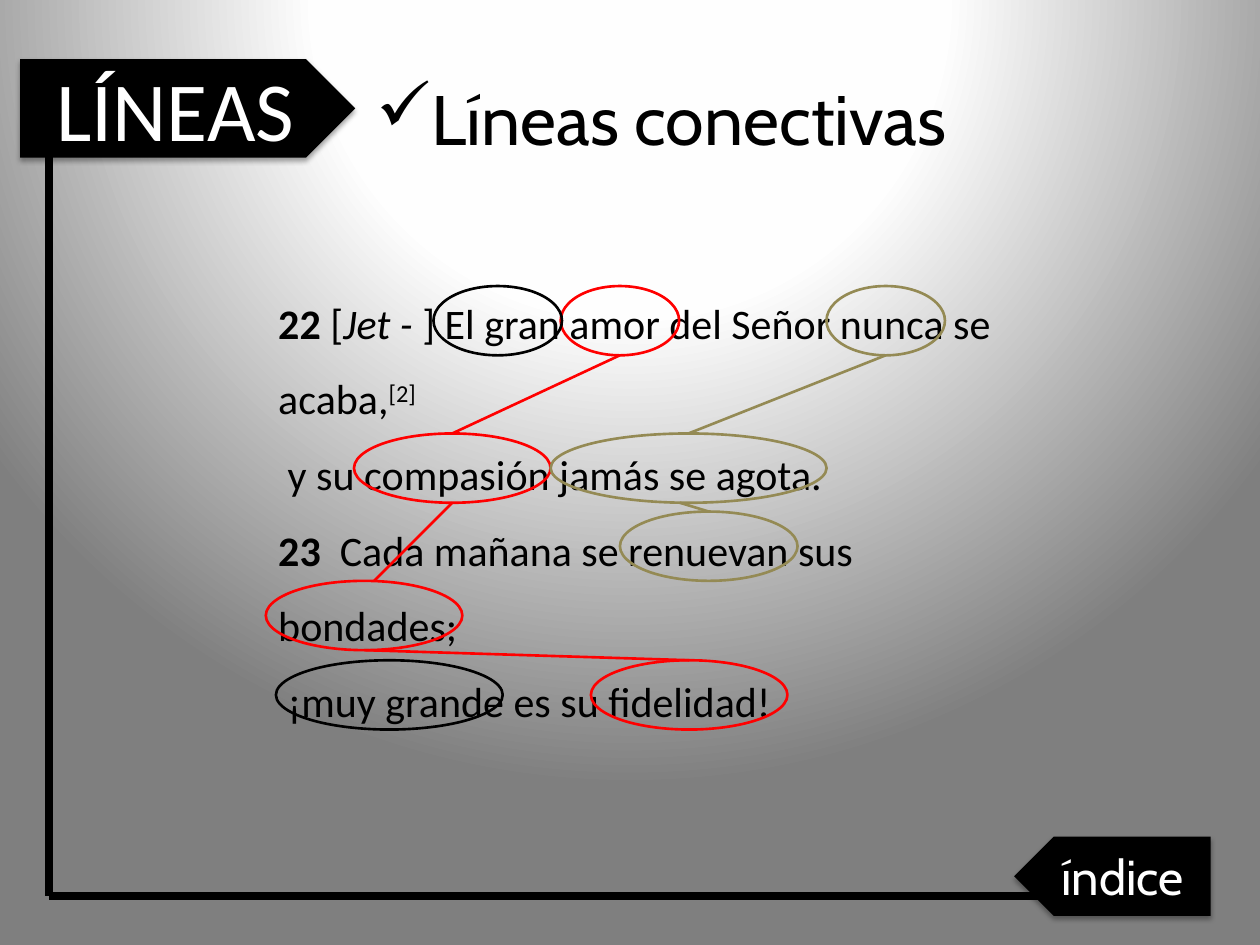
from dataclasses import dataclass

from lxml import etree
from pptx import Presentation
from pptx.dml.color import RGBColor
from pptx.enum.shapes import MSO_CONNECTOR, MSO_SHAPE
from pptx.enum.text import MSO_ANCHOR, MSO_AUTO_SIZE, PP_ALIGN
from pptx.oxml import parse_xml
from pptx.oxml.ns import nsdecls, qn
from pptx.util import Inches, Pt

STRAIGHT = MSO_CONNECTOR.STRAIGHT
OVAL = MSO_SHAPE.OVAL
PENTAGON = MSO_SHAPE.PENTAGON
TOP, MIDDLE = MSO_ANCHOR.TOP, MSO_ANCHOR.MIDDLE
LEFT, CENTER = PP_ALIGN.LEFT, PP_ALIGN.CENTER
NO_AUTOFIT = MSO_AUTO_SIZE.NONE

BLACK = RGBColor(0x00, 0x00, 0x00)
WHITE = RGBColor(0xFF, 0xFF, 0xFF)
RED = RGBColor(0xFF, 0x00, 0x00)
OLIVE = RGBColor(0x94, 0x8A, 0x54)

RING_HEIGHT = 0.55
FRAME_X, FRAME_Y = 0.39, 7.11

BACKGROUND = f"""
<p:bg {nsdecls("p", "a")}><p:bgPr><a:gradFill rotWithShape="1"><a:gsLst>
<a:gs pos="0"><a:srgbClr val="FFFFFF"/></a:gs>
<a:gs pos="40000"><a:srgbClr val="FEFEFE"/></a:gs>
<a:gs pos="100000"><a:srgbClr val="7F7F7F"/></a:gs></a:gsLst>
<a:path path="circle"><a:fillToRect l="50000" t="-80000" r="50000" b="180000"/></a:path>
</a:gradFill><a:effectLst/></p:bgPr></p:bg>"""

SHADOW = f"""
<a:effectLst {nsdecls("a")}>
<a:outerShdw blurRad="{Pt(3.1)}" dist="{Pt(1.8)}" dir="5400000" rotWithShape="0">
<a:srgbClr val="000000"><a:alpha val="35000"/></a:srgbClr></a:outerShdw></a:effectLst>"""


@dataclass(frozen=True)
class Ring:
    left: float
    top: float
    width: float
    color: RGBColor

    @property
    def center(self) -> float:
        return self.left + self.width / 2

    @property
    def bottom(self) -> float:
        return self.top + RING_HEIGHT


@dataclass(frozen=True)
class Link:
    upper: str
    lower: str
    upper_shift: float = 0
    lower_shift: float = 0


@dataclass(frozen=True)
class Tag:
    text: str
    left: float
    top: float
    width: float
    height: float
    font: str
    size: int
    flipped: bool = False


@dataclass(frozen=True)
class Piece:
    text: str
    bold: bool = False
    italic: bool = False
    raised: bool = False


RINGS = {
    "amor": Ring(4.45, 2.27, 0.94, RED),
    "compasión": Ring(2.81, 3.44, 1.56, RED),
    "bondades": Ring(2.11, 4.61, 1.56, RED),
    "fidelidad": Ring(4.69, 5.24, 1.56, RED),
    "nunca": Ring(6.56, 2.27, 0.94, OLIVE),
    "jamás": Ring(4.37, 3.44, 2.19, OLIVE),
    "renuevan": Ring(4.92, 4.06, 1.41, OLIVE),
    "gran": Ring(3.44, 2.27, 1.02, BLACK),
    "grande": Ring(2.19, 5.24, 1.8, BLACK),
}

LINKS = [
    Link("nunca", "jamás"),
    Link("jamás", "renuevan", upper_shift=-0.07),
    Link("amor", "compasión"),
    Link("compasión", "bondades", lower_shift=0.08),
    Link("bondades", "fidelidad"),
]

SECTION_TAG = Tag("LÍNEAS", 0.16, 0.47, 2.66, 0.78, "Calibri", 48)
INDEX_TAG = Tag("índice", 8.05, 6.64, 1.56, 0.63, "Cabin", 28, flipped=True)

VERSES = [
    [
        Piece("22 ", bold=True),
        Piece("["),
        Piece("Jet - ", italic=True),
        Piece("] El gran amor del Señor nunca se acaba,"),
        Piece("[2]", raised=True),
    ],
    [Piece(" y su compasión jamás se agota.")],
    [Piece("23 ", bold=True), Piece(" Cada mañana se renuevan sus bondades;")],
    [Piece(" ¡muy grande es su fidelidad!")],
]


def format_font(font, name: str, size: int, color: RGBColor) -> None:
    font.name = name
    font.size = Pt(size)
    font.color.rgb = color


def add_line(slide, x1: float, y1: float, x2: float, y2: float,
             color: RGBColor, weight: float) -> None:
    line = slide.shapes.add_connector(
        STRAIGHT, Inches(x1), Inches(y1), Inches(x2), Inches(y2))
    line.line.color.rgb = color
    line.line.width = Pt(weight)
    etree.SubElement(line._element.spPr, qn("a:effectLst"))


def add_tag(slide, tag: Tag) -> None:
    arrow = slide.shapes.add_shape(
        PENTAGON, Inches(tag.left), Inches(tag.top), Inches(tag.width), Inches(tag.height))
    arrow.fill.solid()
    arrow.fill.fore_color.rgb = BLACK
    arrow.line.fill.background()
    arrow._element.spPr.append(parse_xml(SHADOW))
    if tag.flipped:
        arrow._element.spPr.xfrm.set("flipH", "1")
    frame = arrow.text_frame
    frame.text = tag.text
    frame.vertical_anchor = MIDDLE
    label = frame.paragraphs[0]
    label.alignment = CENTER
    format_font(label.runs[0].font, tag.font, tag.size, WHITE)


def add_ring(slide, ring: Ring) -> None:
    oval = slide.shapes.add_shape(
        OVAL, Inches(ring.left), Inches(ring.top), Inches(ring.width), Inches(RING_HEIGHT))
    oval.fill.background()
    oval.line.color.rgb = ring.color
    oval.line.width = Pt(1.5)
    oval.shadow.inherit = False


def add_link(slide, link: Link) -> None:
    upper, lower = RINGS[link.upper], RINGS[link.lower]
    add_line(slide, upper.center + link.upper_shift, upper.bottom,
             lower.center + link.lower_shift, lower.top, upper.color, 1.5)


def set_title(slide) -> None:
    title = slide.shapes.title
    title.left, title.top = Inches(2.89), Inches(0.55)
    title.width, title.height = Inches(5.94), Inches(0.77)
    frame = title.text_frame
    frame.text = "Líneas conectivas"
    frame.vertical_anchor = TOP
    frame.auto_size = NO_AUTOFIT
    heading = frame.paragraphs[0]
    heading.alignment = LEFT
    format_font(heading.runs[0].font, "Cabin", 40, BLACK)
    properties = heading._p.get_or_add_pPr()
    properties.set("marL", str(Inches(0.43)))
    properties.set("indent", str(-Inches(0.43)))
    etree.SubElement(properties, qn("a:buChar")).set("char", "✓")


def add_verses(slide) -> None:
    passage = slide.shapes.add_textbox(
        Inches(2.11), Inches(2.11), Inches(6.25), Inches(3.74))
    frame = passage.text_frame
    frame.word_wrap = True
    for index, verse in enumerate(VERSES):
        paragraph = frame.add_paragraph() if index else frame.paragraphs[0]
        paragraph.line_spacing = 1.5
        for piece in verse:
            run = paragraph.add_run()
            run.text = piece.text
            format_font(run.font, "Calibri", 24, BLACK)
            run.font.bold = piece.bold
            run.font.italic = piece.italic
            if piece.raised:
                run._r.get_or_add_rPr().set("baseline", "30000")


def main() -> None:
    deck = Presentation()
    deck.slide_width, deck.slide_height = Inches(10), Inches(7.5)
    slide = deck.slides.add_slide(deck.slide_layouts[5])
    slide._element.cSld.insert(0, parse_xml(BACKGROUND))
    add_line(slide, FRAME_X, SECTION_TAG.top, FRAME_X, FRAME_Y, BLACK, 4.5)
    add_tag(slide, SECTION_TAG)
    add_line(slide, FRAME_X, FRAME_Y, 9.45, FRAME_Y, BLACK, 4.5)
    set_title(slide)
    add_verses(slide)
    for ring in RINGS.values():
        add_ring(slide, ring)
    for link in LINKS:
        add_link(slide, link)
    add_tag(slide, INDEX_TAG)
    deck.save("out.pptx")


if __name__ == "__main__":
    main()
